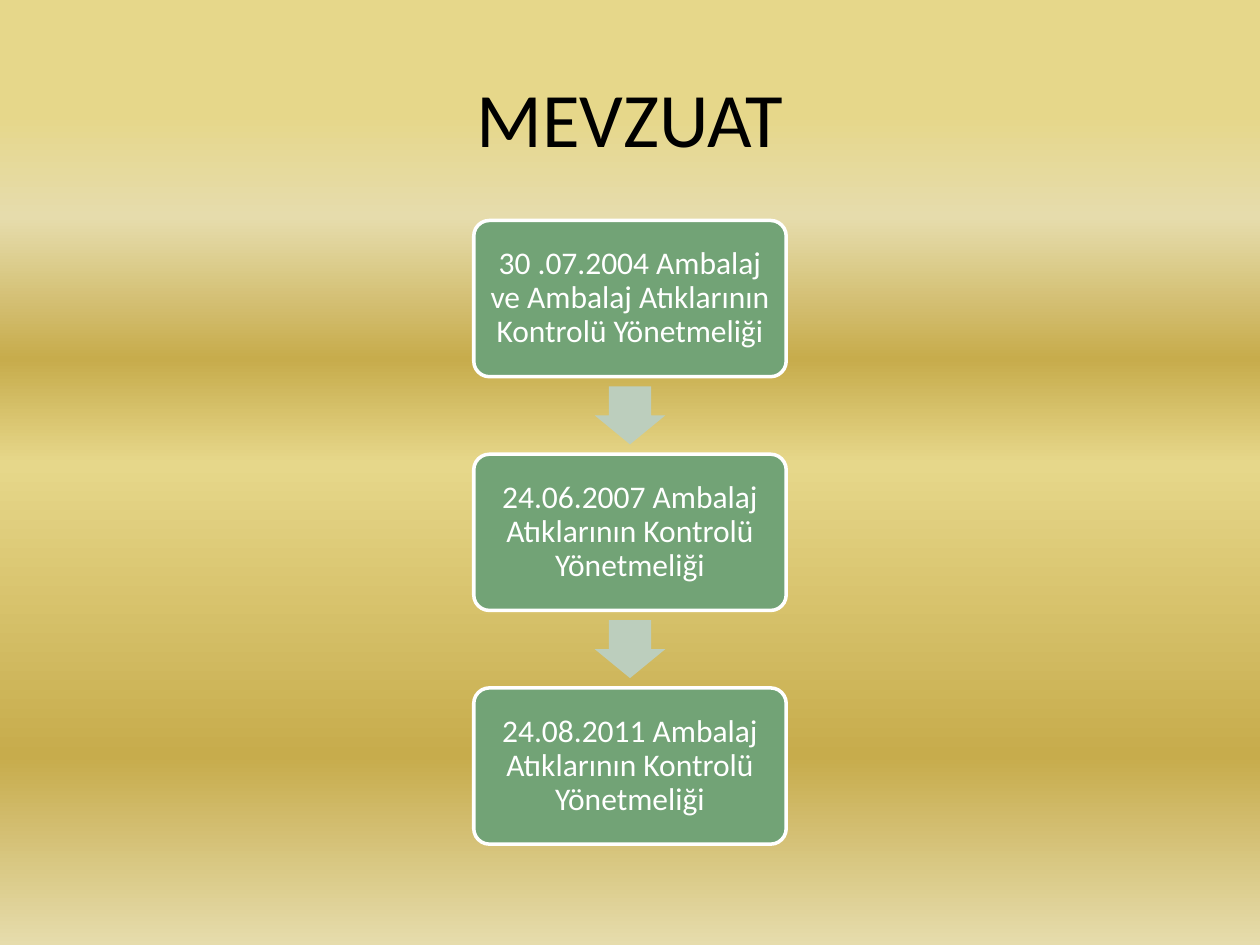
from lxml import etree
from pptx import Presentation
from pptx.dml.color import RGBColor
from pptx.enum import shapes, text
from pptx.oxml.ns import qn
from pptx.util import Inches, Pt

FONT = "Calibri"
BLACK = RGBColor(0x00, 0x00, 0x00)
WHITE = RGBColor(0xFF, 0xFF, 0xFF)
GREEN = RGBColor(0x72, 0xA3, 0x76)
PALE_GREEN = RGBColor(0xBC, 0xCE, 0xBD)
GOLD = RGBColor(0xE6, 0xD7, 0x8A)
CREAM = RGBColor(0xE6, 0xDC, 0xAC)
BRONZE = RGBColor(0xC7, 0xAC, 0x4C)

GOLD_STOPS = [(12, GOLD), (23, CREAM), (38, BRONZE),
              (49, GOLD), (80, BRONZE), (100, CREAM)]
REGULATIONS = [
    "30 .07.2004 Ambalaj ve Ambalaj Atıklarının Kontrolü Yönetmeliği",
    "24.06.2007 Ambalaj Atıklarının Kontrolü Yönetmeliği",
    "24.08.2011 Ambalaj Atıklarının Kontrolü Yönetmeliği",
]

# Flow geometry in inches
CENTER = 5
FLOW_TOP = 1.75
BOX_W, BOX_H = 2.48, 1.24
STEP = 1.855
ARROW_LENGTH, ARROW_WIDTH = 0.46, 0.56


def paint_background(slide):
    fill = slide.background.fill
    fill.gradient()
    fill.gradient_angle = 270
    stops = slide.element.find(".//" + qn("a:gsLst"))
    for stop in list(stops):
        stops.remove(stop)
    for percent, color in GOLD_STOPS:
        stop = etree.SubElement(stops, qn("a:gs"), pos=str(percent * 1000))
        etree.SubElement(stop, qn("a:srgbClr"), val=str(color))


def write(shape, words, size, color):
    frame = shape.text_frame
    frame.word_wrap = True
    frame.vertical_anchor = text.MSO_ANCHOR.MIDDLE
    frame.text = words
    paragraph = frame.paragraphs[0]
    paragraph.alignment = text.PP_ALIGN.CENTER
    font = paragraph.runs[0].font
    font.name, font.size, font.color.rgb = FONT, Pt(size), color
    return frame


def add_title(slide, words):
    title = slide.shapes.add_textbox(Inches(0.5), Inches(0.3), Inches(9), Inches(1.25))
    write(title, words, 44, BLACK)


def add_filled(slide, preset, left, top, width, height, color):
    shape = slide.shapes.add_shape(
        preset, Inches(left), Inches(top), Inches(width), Inches(height))
    shape.shadow.inherit = False
    shape.fill.solid()
    shape.fill.fore_color.rgb = color
    return shape


def add_regulation(slide, top, words):
    box = add_filled(slide, shapes.MSO_SHAPE.ROUNDED_RECTANGLE,
                     CENTER - BOX_W / 2, top, BOX_W, BOX_H, GREEN)
    box.adjustments[0] = 0.1
    box.line.color.rgb = WHITE
    box.line.width = Pt(2)
    frame = write(box, words, 18, WHITE)
    frame.margin_left = frame.margin_right = Inches(0.07)
    frame.margin_top = frame.margin_bottom = Inches(0.07)
    frame.paragraphs[0].line_spacing = 0.9


def add_down_arrow(slide, middle):
    arrow = add_filled(slide, shapes.MSO_SHAPE.RIGHT_ARROW,
                       CENTER - ARROW_LENGTH / 2, middle - ARROW_WIDTH / 2,
                       ARROW_LENGTH, ARROW_WIDTH, PALE_GREEN)
    arrow.rotation = 90
    arrow.adjustments[0] = 0.6
    arrow.adjustments[1] = 0.5
    arrow.line.fill.background()


def main():
    prs = Presentation()
    prs.slide_width, prs.slide_height = Inches(10), Inches(7.5)
    slide = prs.slides.add_slide(prs.slide_layouts[6])

    paint_background(slide)
    add_title(slide, "MEVZUAT")

    # Regulations in order of date, with an arrow in each gap
    for index, regulation in enumerate(REGULATIONS):
        top = FLOW_TOP + index * STEP
        if index:
            add_down_arrow(slide, top - (STEP - BOX_H) / 2)
        add_regulation(slide, top, regulation)

    prs.save("out.pptx")


if __name__ == "__main__":
    main()
